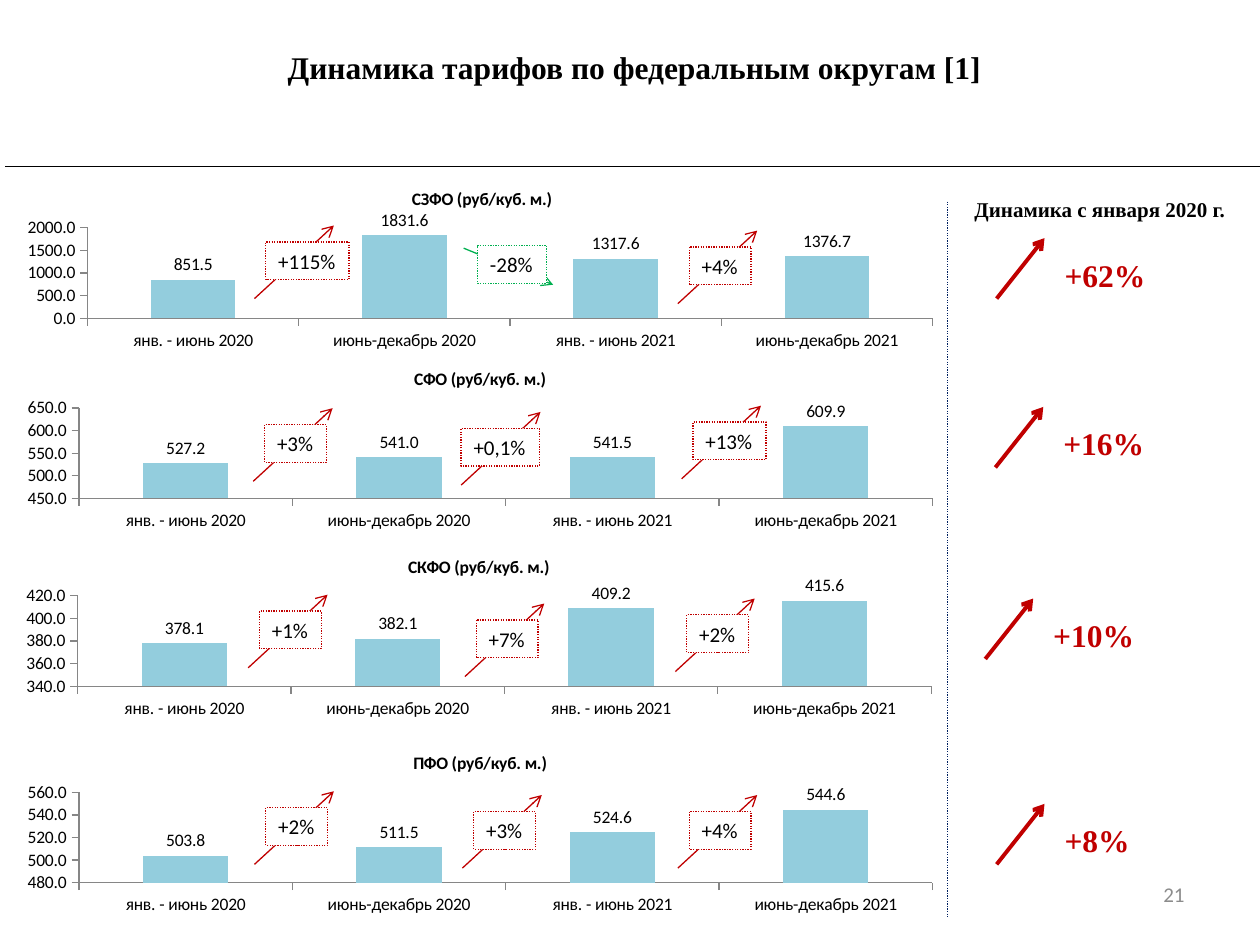
from lxml.etree import SubElement
from pptx import Presentation
from pptx.chart.data import CategoryChartData
from pptx.dml.color import RGBColor
from pptx.enum.chart import XL_CHART_TYPE, XL_LABEL_POSITION as LabelPos, XL_TICK_MARK as Tick
from pptx.enum.dml import MSO_LINE
from pptx.enum.shapes import MSO_CONNECTOR, MSO_SHAPE
from pptx.enum.text import MSO_ANCHOR as Anchor, PP_ALIGN as Align
from pptx.oxml.ns import qn
from pptx.util import Inches, Pt

BLACK = RGBColor(0x00, 0x00, 0x00)
WHITE = RGBColor(0xFF, 0xFF, 0xFF)
RED = RGBColor(0xC0, 0x00, 0x00)
GREEN = RGBColor(0x00, 0xB0, 0x50)
NAVY = RGBColor(0x00, 0x20, 0x60)
GREY = RGBColor(0x8C, 0x8C, 0x8C)
AXIS_GREY = RGBColor(0x86, 0x86, 0x86)
BAR_BLUE = RGBColor(0x93, 0xCD, 0xDD)
SERIF, SANS = "Times New Roman", "Calibri"

PERIODS = ["янв. - июнь 2020", "июнь-декабрь 2020", "янв. - июнь 2021", "июнь-декабрь 2021"]
CHART_WIDTH, CHART_HEIGHT = 7.48, 1.43
BOX_HEIGHT = 0.3

# Each change: text, arrow start x and y, box width
# Total: text, arrow start x and y, text width
DISTRICTS = [
    dict(title=" СЗФО (руб/куб. м.)", left=0.07, top=1.38, scale=(0, 2000, 500),
         tariffs=[851.5, 1831.6, 1317.6, 1376.7],
         changes=[("+115%", 2.02, 2.37, 0.66), ("-28%", 3.68, 1.97, 0.55), ("+4%", 5.38, 2.41, 0.49)],
         total=("+62%", 7.91, 2.37, 0.85)),
    dict(title="СФО (руб/куб. м.)", left=0.07, top=2.81, scale=(450, 650, 50),
         tariffs=[527.2, 541.0, 541.5, 609.9],
         changes=[("+3%", 2.01, 3.82, 0.49), ("+0,1%", 3.66, 3.85, 0.62), ("+13%", 5.41, 3.8, 0.58)],
         total=("+16%", 7.9, 3.71, 0.85)),
    dict(title="СКФО (руб/куб. м.)", left=0.06, top=4.3, scale=(340, 420, 20),
         tariffs=[378.1, 382.1, 409.2, 415.6],
         changes=[("+1%", 1.97, 5.3, 0.49), ("+7%", 3.69, 5.37, 0.49), ("+2%", 5.36, 5.33, 0.49)],
         total=("+10%", 7.82, 5.23, 0.85)),
    dict(title="ПФО (руб/куб. м.)", left=0.07, top=5.86, scale=(480, 560, 20),
         tariffs=[503.8, 511.5, 524.6, 544.6],
         changes=[("+2%", 2.02, 6.86, 0.49), ("+3%", 3.67, 6.89, 0.49), ("+4%", 5.38, 6.89, 0.49)],
         total=("+8%", 7.91, 6.86, 0.72)),
]

prs = Presentation()
prs.slide_width, prs.slide_height = Inches(10), Inches(7.5)
slide = prs.slides.add_slide(prs.slide_layouts[6])


def add_text(text, left, top, width, height, size=18, font=SERIF, color=BLACK, bold=True,
             align=Align.LEFT, anchor=Anchor.TOP, wrap=True, border=None):
    """Add a text box, or a white dotted-border rectangle when border is a colour."""
    place = [Inches(length) for length in (left, top, width, height)]
    if border is None:
        holder = slide.shapes.add_textbox(*place)
    else:
        holder = slide.shapes.add_shape(MSO_SHAPE.RECTANGLE, *place)
        holder.shadow.inherit = False
        holder.fill.solid()
        holder.fill.fore_color.rgb = WHITE
        holder.line.color.rgb = border
        holder.line.width = Pt(0.75)
        holder.line.dash_style = MSO_LINE.ROUND_DOT
    frame = holder.text_frame
    frame.word_wrap = wrap
    frame.vertical_anchor = anchor
    paragraph = frame.paragraphs[0]
    paragraph.alignment = align
    run = paragraph.add_run()
    run.text = text
    run.font.name, run.font.size, run.font.bold = font, Pt(size), bold
    run.font.color.rgb = color


def add_line(x1, y1, x2, y2, color=BLACK, width=0.75, dash=None, arrow=False):
    line = slide.shapes.add_connector(
        MSO_CONNECTOR.STRAIGHT, Inches(x1), Inches(y1), Inches(x2), Inches(y2))
    line.line.color.rgb = color
    line.line.width = Pt(width)
    if dash:
        line.line.dash_style = dash
    properties = line._element.spPr
    if arrow:
        SubElement(properties.find(qn("a:ln")), qn("a:tailEnd"), type="arrow")
    SubElement(properties, qn("a:effectLst"))


add_text("Динамика тарифов по федеральным округам [1]", 0.35, 0.33, 9.37, 0.4, align=Align.CENTER)
add_line(0.04, 1.32, 10.04, 1.32)
add_text("Динамика с января 2020 г.", 7.55, 1.51, 2.36, 0.3, size=12, align=Align.CENTER)
add_line(7.52, 1.6, 7.52, 7.29, color=NAVY, dash=MSO_LINE.ROUND_DOT)

for district in DISTRICTS:
    data = CategoryChartData(number_format="0.0")
    data.categories = PERIODS
    data.add_series("Тариф", district["tariffs"])
    chart = slide.shapes.add_chart(
        XL_CHART_TYPE.COLUMN_CLUSTERED, Inches(district["left"]), Inches(district["top"]),
        Inches(CHART_WIDTH), Inches(CHART_HEIGHT), data).chart
    chart.has_legend = False
    chart.font.name, chart.font.size = SANS, Pt(10)
    chart.font.color.rgb = BLACK

    chart.has_title = True
    chart.chart_title.include_in_layout = False
    title = chart.chart_title.text_frame.paragraphs[0].add_run()
    title.text = district["title"]
    title.font.name, title.font.size, title.font.bold = SANS, Pt(10), True
    title.font.color.rgb = BLACK

    for axis in (chart.category_axis, chart.value_axis):
        axis.has_major_gridlines = False
        axis.major_tick_mark = Tick.OUTSIDE
        axis.minor_tick_mark = Tick.NONE
        axis.format.line.color.rgb = AXIS_GREY
        axis.tick_labels.font.size = Pt(10)
    tariff_axis = chart.value_axis
    tariff_axis.minimum_scale, tariff_axis.maximum_scale, tariff_axis.major_unit = district["scale"]
    tariff_axis.tick_labels.number_format = "0.0"
    tariff_axis.tick_labels.number_format_is_linked = False

    plot = chart.plots[0]
    plot.gap_width = 150
    plot.vary_by_categories = False
    bars = plot.series[0].format.fill
    bars.solid()
    bars.fore_color.rgb = BAR_BLUE
    plot.has_data_labels = True
    labels = plot.data_labels
    labels.show_value = True
    labels.position = LabelPos.OUTSIDE_END
    labels.number_format, labels.number_format_is_linked = "0.0", False
    labels.font.size = Pt(10)

    for change, x, y, box_width in district["changes"]:
        if change.startswith("-"):
            color, run_x, run_y, box_x, box_y = GREEN, 0.71, 0.29, 0.11, -0.02
        else:
            color, run_x, run_y, box_x, box_y = RED, 0.63, -0.58, 0.09, -0.45
        if change == "+0,1%":
            box_x = 0
        add_line(x, y, x + run_x, y + run_y, color=color, arrow=True)
        add_text(change, x + box_x, y + box_y, box_width, BOX_HEIGHT, size=12, font=SANS,
                 bold=False, wrap=False, border=color)

    total, x, y, text_width = district["total"]
    add_line(x, y, x + 0.38, y - 0.48, color=RED, width=2.25, arrow=True)
    add_text(total, x + 0.44, y - 0.39, text_width, 0.4, color=RED, wrap=False)

add_text("21", 7.17, 6.9, 2.33, 0.4, size=12, font=SANS, color=GREY, bold=False,
         align=Align.RIGHT, anchor=Anchor.MIDDLE)

prs.save("out.pptx")
